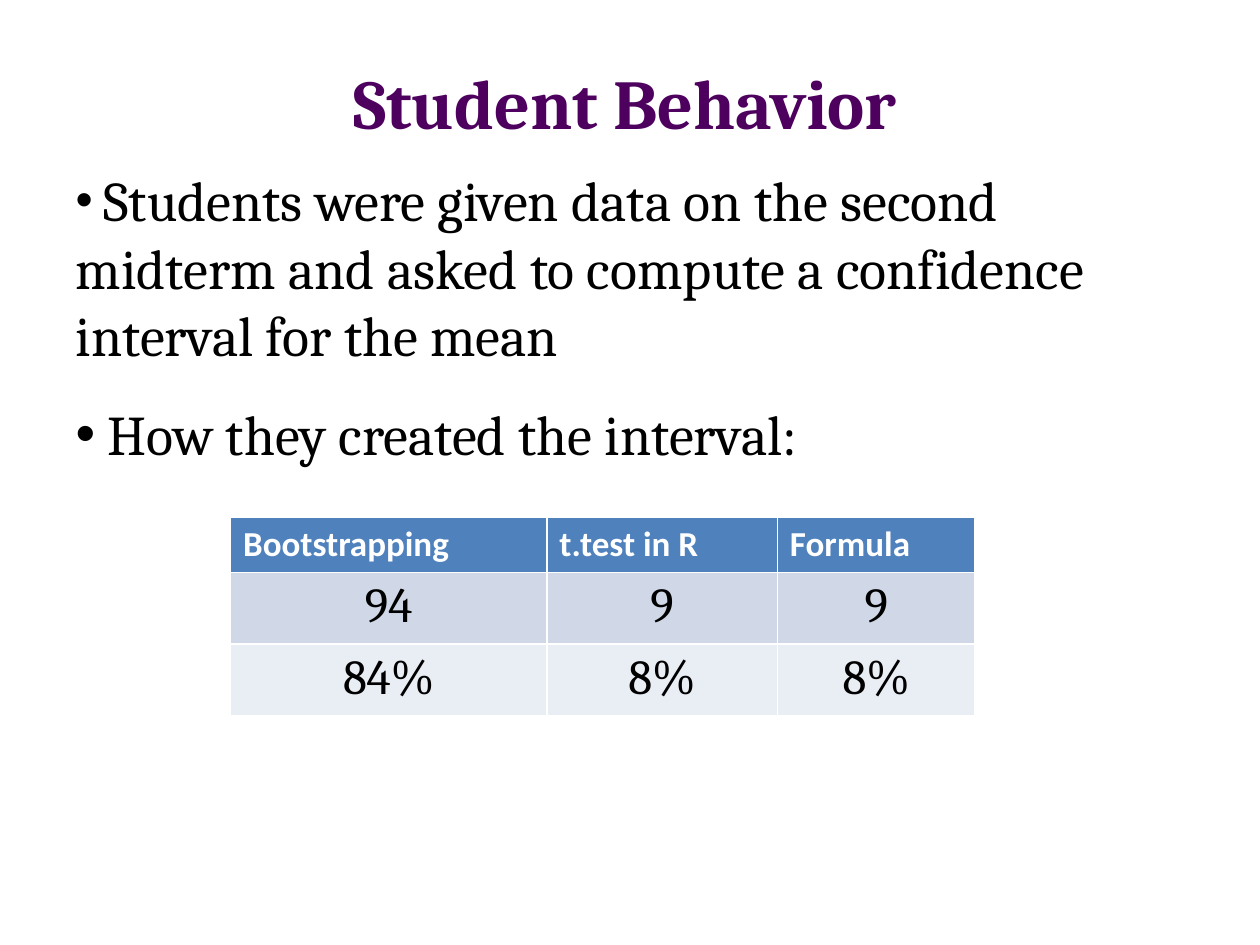
from dataclasses import dataclass

from lxml.etree import SubElement
from pptx import Presentation
from pptx.dml.color import RGBColor
from pptx.enum.text import MSO_ANCHOR, MSO_AUTO_SIZE, PP_ALIGN
from pptx.oxml.ns import qn
from pptx.util import Inches, Pt


@dataclass(frozen=True)
class Theme:
    """Colours, fonts and type sizes of the slide."""
    title: str = "4E005F"
    ink: str = "000000"
    paper: str = "FFFFFF"
    header: str = "4F81BD"
    bands: tuple = ("D0D8E8", "E9EDF4")
    serif: str = "Cambria"
    sans: str = "Calibri"
    title_size: int = 40
    body_size: int = 32
    lead_size: int = 28
    header_size: int = 20
    value_size: int = 28


THEME = Theme()
WIDTH, HEIGHT = Inches(10), Inches(7.5)
LEFT, COLUMN_WIDTH = 0.05, 0.892
TABLE_LEFT, TABLE_TOP = 0.183, 0.547
COLUMN_SHARES = (0.251, 0.183, 0.157)
ROW_SHARES = (0.057, 0.076, 0.076)
BULLETS = (
    (" ", "Students were given data on the second midterm and asked to "
          "compute a confidence interval for the mean"),
    ("", " How they created the interval:"),
)
ROWS = (
    ("Bootstrapping", "t.test in R", "Formula"),
    ("94", "9", "9"),
    ("84%", "8%", "8%"),
)


def style_font(font, name, size, color, bold=False):
    """Apply a typeface, size, colour and weight."""
    font.name, font.size, font.bold = name, Pt(size), bold
    font.color.rgb = RGBColor.from_string(color)


def place(shape, left, top, width, height):
    """Place a text shape by shares of the slide, with its text at the top."""
    shape.left, shape.top = int(WIDTH * left), int(HEIGHT * top)
    shape.width, shape.height = int(WIDTH * width), int(HEIGHT * height)
    frame = shape.text_frame
    frame.word_wrap = True
    frame.auto_size = MSO_AUTO_SIZE.NONE
    frame.vertical_anchor = MSO_ANCHOR.TOP


def fill_title(shape, text):
    """Write the centred slide title."""
    place(shape, LEFT, 0.056, COLUMN_WIDTH, 0.177)
    shape.text_frame.text = text
    para = shape.text_frame.paragraphs[0]
    para.alignment = PP_ALIGN.CENTER
    style_font(para.font, THEME.serif, THEME.title_size, THEME.title, True)


def add_bullet(para):
    """Give a paragraph a bullet without a hanging indent."""
    properties = para._p.get_or_add_pPr()
    properties.set("marL", "0")
    properties.set("indent", "0")
    SubElement(properties, qn("a:buFont")).set("typeface", "Arial")
    SubElement(properties, qn("a:buChar")).set("char", "•")


def fill_body(shape, bullets):
    """Write the bullets, each with an optional smaller lead."""
    place(shape, LEFT, 0.169, COLUMN_WIDTH, 0.831)
    frame = shape.text_frame
    for index, (lead, text) in enumerate(bullets):
        para = frame.add_paragraph() if index else frame.paragraphs[0]
        add_bullet(para)
        para.space_before, para.space_after = Pt(0), Pt(18)
        style_font(para.font, THEME.serif, THEME.body_size, THEME.ink)
        if lead:
            span = para.add_run()
            span.text = lead
            span.font.size = Pt(THEME.lead_size)
        para.add_run().text = text


def fill_cell(cell, text, row):
    """Write one table cell in the style of its row."""
    cell.text = text
    cell.fill.solid()
    para = cell.text_frame.paragraphs[0]
    if row == 0:
        color = THEME.header
        style_font(para.font, THEME.sans, THEME.header_size, THEME.paper, True)
    else:
        color = THEME.bands[(row - 1) % 2]
        para.alignment = PP_ALIGN.CENTER
        style_font(para.font, THEME.serif, THEME.value_size, THEME.ink)
    cell.fill.fore_color.rgb = RGBColor.from_string(color)


def add_counts_table(page, rows):
    """Add the table of methods with counts and percentages."""
    table = page.shapes.add_table(
        len(rows), len(rows[0]),
        int(WIDTH * TABLE_LEFT), int(HEIGHT * TABLE_TOP),
        int(WIDTH * sum(COLUMN_SHARES)), int(HEIGHT * sum(ROW_SHARES)),
    ).table
    for column, share in zip(table.columns, COLUMN_SHARES):
        column.width = int(WIDTH * share)
    for row, share in zip(table.rows, ROW_SHARES):
        row.height = int(HEIGHT * share)
    for row, values in enumerate(rows):
        for column, value in enumerate(values):
            fill_cell(table.cell(row, column), value, row)


def main():
    """Build and save the slide."""
    deck = Presentation()
    deck.slide_width, deck.slide_height = WIDTH, HEIGHT
    page = deck.slides.add_slide(deck.slide_layouts[1])
    fill_title(page.shapes.title, "Student Behavior")
    fill_body(page.placeholders[1], BULLETS)
    add_counts_table(page, ROWS)
    deck.save("out.pptx")


if __name__ == "__main__":
    main()
